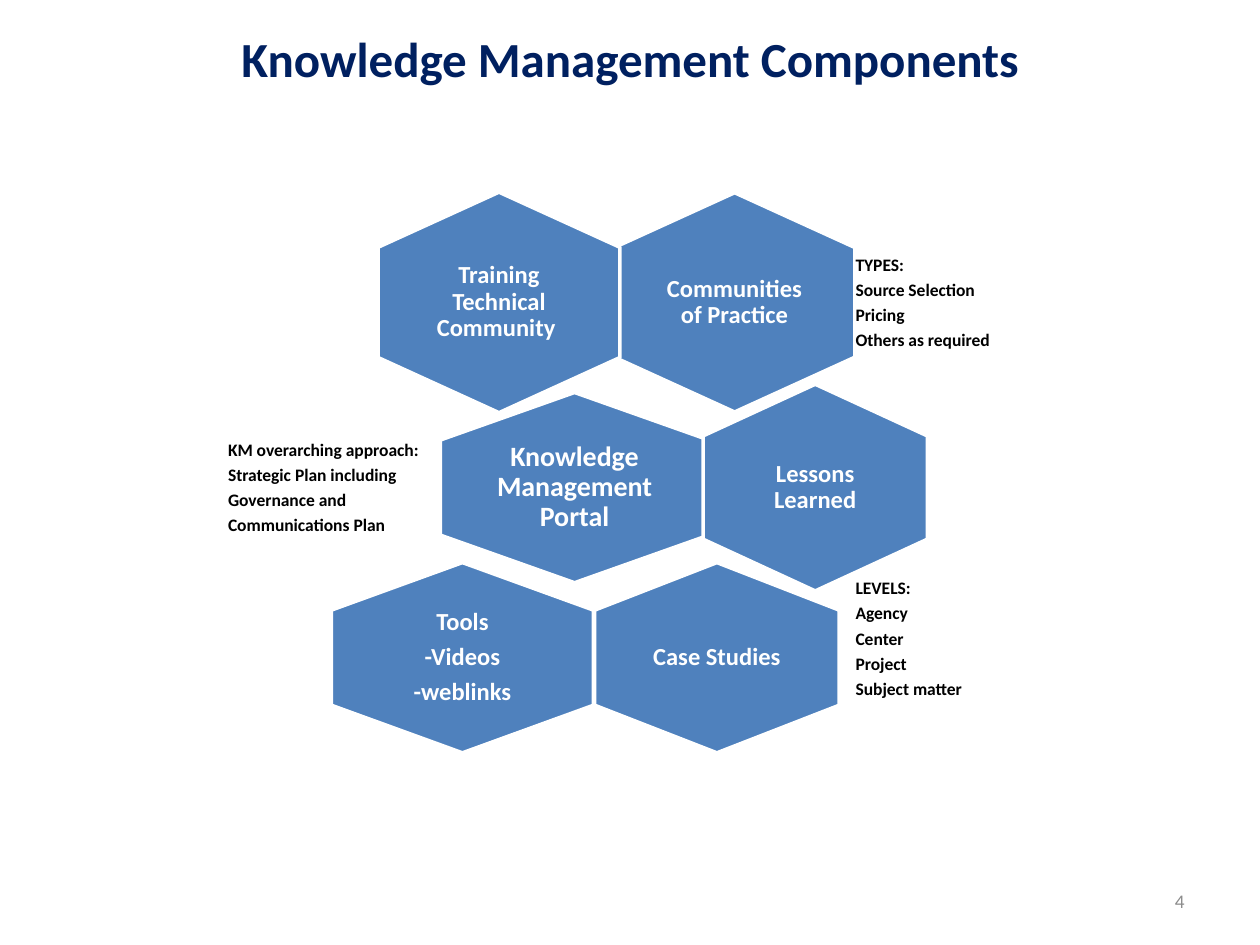
from pptx import Presentation
from pptx.dml.color import RGBColor
from pptx.enum.shapes import MSO_SHAPE as Shape
from pptx.enum.text import MSO_ANCHOR as Anchor, PP_ALIGN as Align
from pptx.util import Inches, Pt


def rgb(code):
    return RGBColor.from_string(code)


def write(box, text, size, color, align, bold=True, inset=0.04, list_gap=True):
    frame = box.text_frame
    frame.word_wrap = True
    frame.vertical_anchor = Anchor.MIDDLE
    frame.margin_left = frame.margin_right = Inches(inset)
    frame.margin_top = frame.margin_bottom = Inches(inset)
    frame.text = text
    for par in frame.paragraphs:
        par.alignment = align
        if list_gap:
            par.line_spacing = 0.9
            par.space_after = Pt(0.35 * size)
        for run in par.runs:
            run.font.name = "Calibri"
            run.font.size = Pt(size)
            run.font.bold = bold
            run.font.color.rgb = rgb(color)


prs = Presentation()
prs.slide_width, prs.slide_height = Inches(10), Inches(7.5)
slide = prs.slides.add_slide(prs.slide_layouts[5])
shapes = slide.shapes

title = shapes.title
title.left, title.top = Inches(0.5), Inches(0.2)
title.width, title.height = Inches(9), Inches(0.52)
write(title, "Knowledge Management Components", 28, "002060", Align.CENTER,
      list_gap=False)

# Centre x and y, size before the quarter turn, label size, inset, points, text
cells = [
    (5.83, 2.4, 1.74, 1.91, 1.27, 1.16, 0.06, 14, "Communities of Practice"),
    (3.96, 2.4, 1.75, 1.92, 1.28, 1.16, 0, 14, "Training Technical Community "),
    (4.56, 3.87, 1.51, 2.13, 1.42, 1.01, 0.07, 16,
     "Knowledge Management Portal"),
    (6.47, 3.87, 1.64, 1.78, 1.18, 1.09, 0, 14, "Lessons Learned"),
    (5.69, 5.22, 1.51, 1.94, 1.29, 1.01, 0.06, 14, "Case Studies"),
    (3.67, 5.22, 1.51, 2.08, 1.39, 1.01, 0, 14, "Tools\n-Videos\n-weblinks"),
]
for x, y, w, h, tw, th, inset, size, text in cells:
    hexa = shapes.add_shape(Shape.HEXAGON, Inches(x - w / 2), Inches(y - h / 2),
                            Inches(w), Inches(h))
    hexa.rotation = 90
    hexa.adjustments[0] = 0.25
    hexa.adjustments[1] = 1.1547
    hexa.shadow.inherit = False
    hexa.fill.solid()
    hexa.fill.fore_color.rgb = rgb("4F81BD")
    hexa.line.color.rgb = rgb("FFFFFF")
    hexa.line.width = Pt(2)
    # The label is a box of its own so that it stays upright
    label = shapes.add_textbox(Inches(x - tw / 2), Inches(y - th / 2),
                               Inches(tw), Inches(th))
    write(label, text, size, "FFFFFF", Align.CENTER, inset=inset)

notes = [
    (6.75, 1.71, 1.69, 1.39,
     "TYPES:\nSource Selection\nPricing\nOthers as required"),
    (1.77, 3.42, 1.63, 0.91,
     "KM overarching approach:\nStrategic Plan including\n"
     "Governance and\nCommunications Plan"),
    (6.75, 4.41, 1.69, 1.33,
     "LEVELS:\nAgency\nCenter\nProject\nSubject matter"),
]
for x, y, w, h, text in notes:
    note = shapes.add_textbox(Inches(x), Inches(y), Inches(w), Inches(h))
    write(note, text, 10, "000000", Align.LEFT)

number = shapes.add_textbox(Inches(7.17), Inches(6.95), Inches(2.33), Inches(0.4))
write(number, "4", 11, "8C8C8C", Align.RIGHT, bold=False, inset=0.1,
      list_gap=False)

prs.save("out.pptx")
